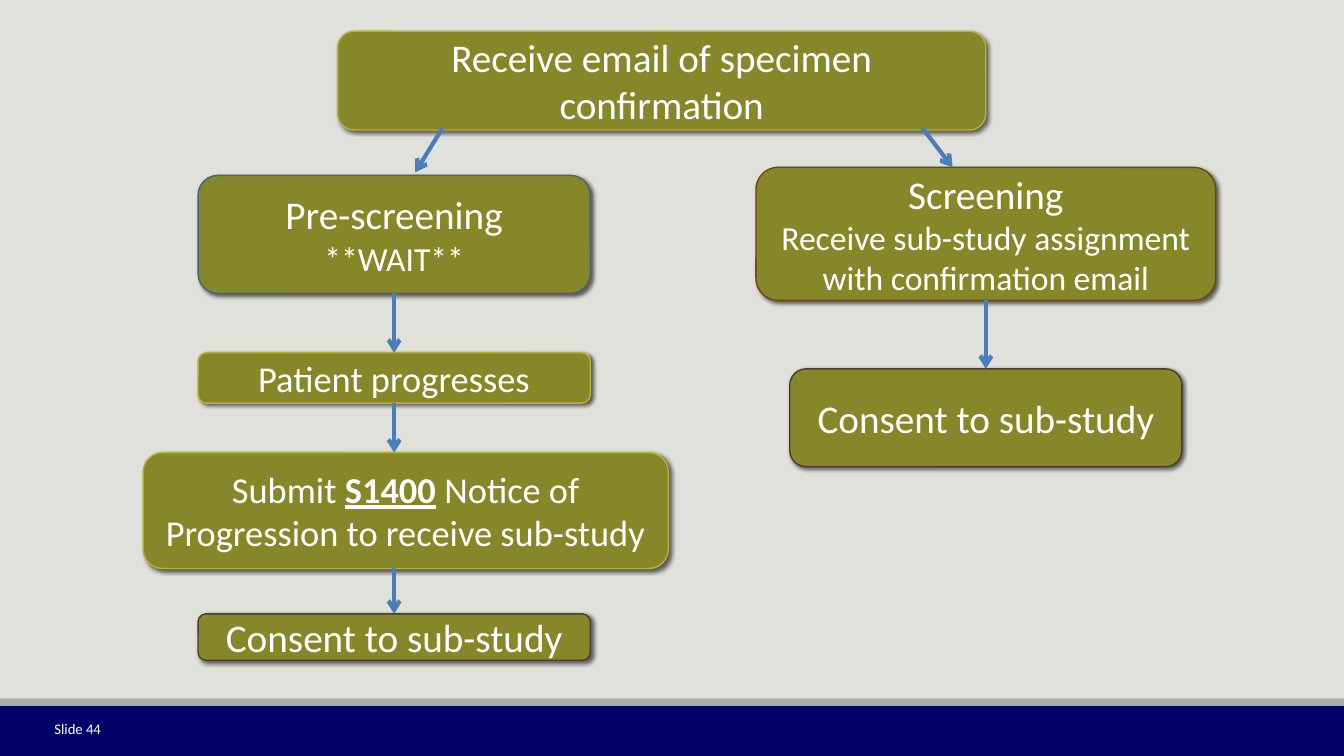
from lxml import etree
from pptx import Presentation, util as u
from pptx.dml import color
from pptx.enum import shapes, text
from pptx.oxml import ns

CELL = u.Inches(0.1)
COLUMNS, ROWS = 133.33, 75
LEFT, RIGHT, TOP = 39.1, 97.8, 65.65
BOX_WIDTH = 38.9
OLIVE, LIME, TEAL, RUST, BROWN = "868728", "B3B435", "456968", "724314", "493E30"
ARROW_BLUE, NAVY, GREY, WHITE, BACKGROUND = "4A7EBB", "000066", "ACADA8", "FFFFFF", "E1E1DB"


def grid(*cells):
    return [int(cell * CELL) for cell in cells]


def paint(target, value):
    target.rgb = color.RGBColor.from_string(value)


def fill(target, value):
    target.solid()
    paint(target.fore_color, value)


def add_element(parent, tag, **attributes):
    return etree.SubElement(parent, ns.qn(tag), attributes)


def write(box, paragraphs, align):
    frame = box.text_frame
    frame.word_wrap = True
    frame.vertical_anchor = text.MSO_ANCHOR.MIDDLE
    for index, spans in enumerate(paragraphs):
        para = frame.paragraphs[0] if index == 0 else frame.add_paragraph()
        para.alignment = align
        for words, size, extra in spans:
            span = para.add_run()
            span.text = words
            formats = {"name": "Calibri", "size": u.Pt(size), **extra}
            for name, value in formats.items():
                setattr(span.font, name, value)
            paint(span.font.color, WHITE)


def add_band(page, top, height, value):
    band = page.shapes.add_shape(
        shapes.MSO_SHAPE.RECTANGLE, *grid(0, top, COLUMNS, height))
    band.shadow.inherit = False
    fill(band.fill, value)
    band.line.fill.background()


def add_shadow(box):
    box.shadow.inherit = False
    effects = box._element.spPr.find(ns.qn("a:effectLst"))
    shadow = add_element(
        effects, "a:outerShdw", blurRad=str(u.Pt(3)), dist=str(u.Pt(2)),
        dir="2700000", algn="ctr", rotWithShape="0")
    shade = add_element(shadow, "a:srgbClr", val="000000")
    add_element(shade, "a:alpha", val="60000")


def add_step(page, center, top, width, height, border, *paragraphs):
    box = page.shapes.add_shape(
        shapes.MSO_SHAPE.ROUNDED_RECTANGLE,
        *grid(center - width / 2, top, width, height))
    fill(box.fill, OLIVE)
    fill(box.line.fill, border)
    box.line.width = u.Pt(1)
    add_shadow(box)
    write(box, paragraphs, text.PP_ALIGN.CENTER)
    return box


def add_arrow(page, start, end, source=None, target=None):
    arrow = page.shapes.add_connector(
        shapes.MSO_CONNECTOR.STRAIGHT, *grid(*start, *end))
    if source is not None:
        arrow.begin_connect(source, 2)
    if target is not None:
        arrow.end_connect(target, 0)
    fill(arrow.line.fill, ARROW_BLUE)
    arrow.line.width = u.Pt(3)
    properties = arrow._element.spPr
    add_element(properties.find(ns.qn("a:ln")), "a:tailEnd", type="arrow")
    add_element(properties, "a:effectLst")


def add_slide_label(page, words):
    label = page.shapes.add_textbox(*grid(0.7, 70.3, 10.3, 4))
    write(label, [[(words, 10.5, {})]], text.PP_ALIGN.RIGHT)


def main():
    deck = Presentation()
    deck.slide_width, deck.slide_height = grid(COLUMNS, ROWS)
    page = deck.slides.add_slide(deck.slide_layouts[6])
    fill(page.background.fill, BACKGROUND)
    add_band(page, 70, 5, NAVY)
    add_band(page, 69.3, 0.7, GREY)

    consent = [("Consent to sub-study", 28, {})]
    add_step(page, TOP, 3.1, 64.3, 9.8, LIME,
             [("Receive email of specimen confirmation", 28, {})])
    waiting = add_step(page, LEFT, 17.4, BOX_WIDTH, 11.7, TEAL,
                       [("Pre-screening", 28, {})], [("**WAIT**", 24, {})])
    screening = add_step(
        page, RIGHT, 16.6, 45.6, 13.2, RUST, [("Screening", 28, {})],
        [("Receive sub-study assignment with confirmation email", 24, {})])
    progress = add_step(page, LEFT, 35, BOX_WIDTH, 5, LIME,
                        [("Patient progresses", 26, {})])
    right_consent = add_step(page, RIGHT, 36.6, BOX_WIDTH, 9.7, BROWN, consent)
    add_step(page, 40.25, 44.9, 52.1, 11.5, LIME,
             [("Submit ", 26, {}),
              ("S1400", 26, {"bold": True, "underline": True}),
              (" Notice of Progression to receive sub-study", 26, {})])
    left_consent = add_step(page, LEFT, 60.9, BOX_WIDTH, 4.6, BROWN, consent)

    add_arrow(page, (43.9, 12.7), (41.2, 17.1))
    add_arrow(page, (91.5, 12.7), (94.5, 16.6))
    add_arrow(page, (LEFT, 29.1), (LEFT, 35), waiting, progress)
    add_arrow(page, (RIGHT, 29.8), (RIGHT, 36.6), screening, right_consent)
    add_arrow(page, (LEFT, 40), (LEFT, 44.9), source=progress)
    add_arrow(page, (LEFT, 56.4), (LEFT, 60.9), target=left_consent)
    add_slide_label(page, "Slide 44")
    deck.save("out.pptx")


if __name__ == "__main__":
    main()
